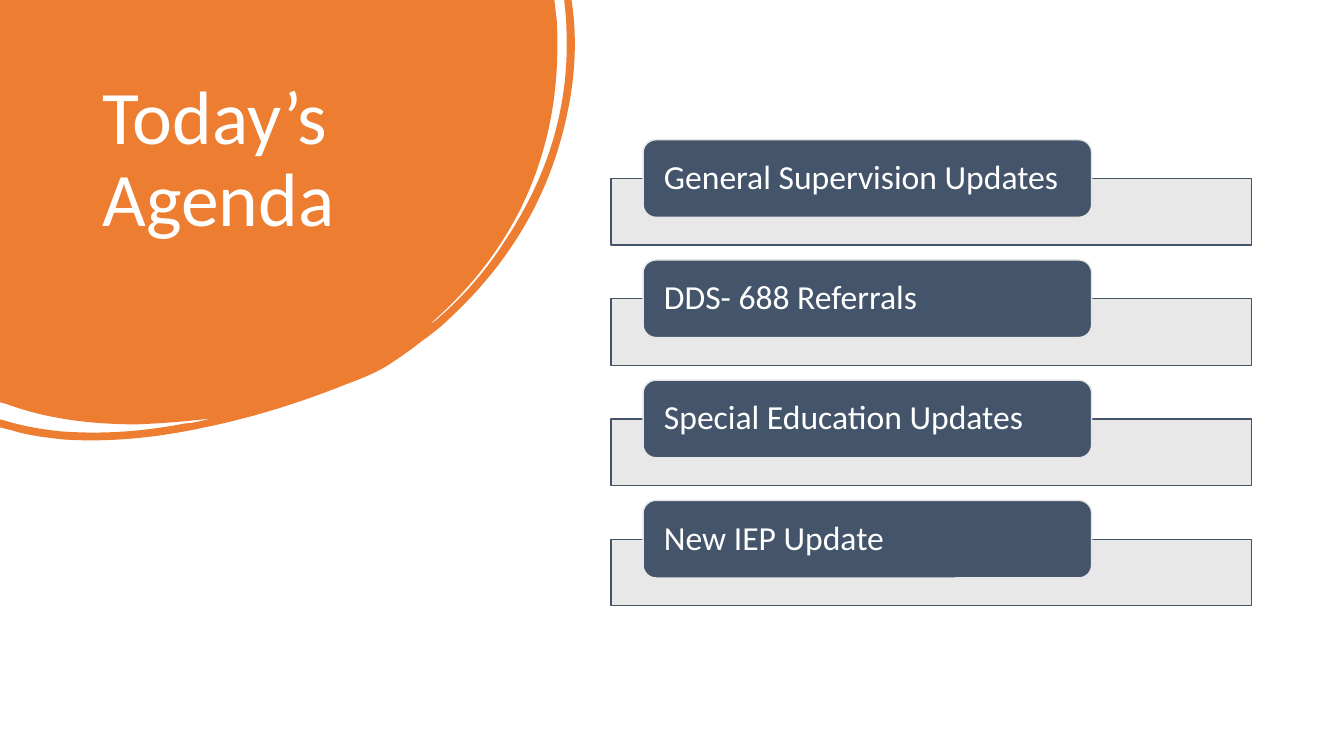
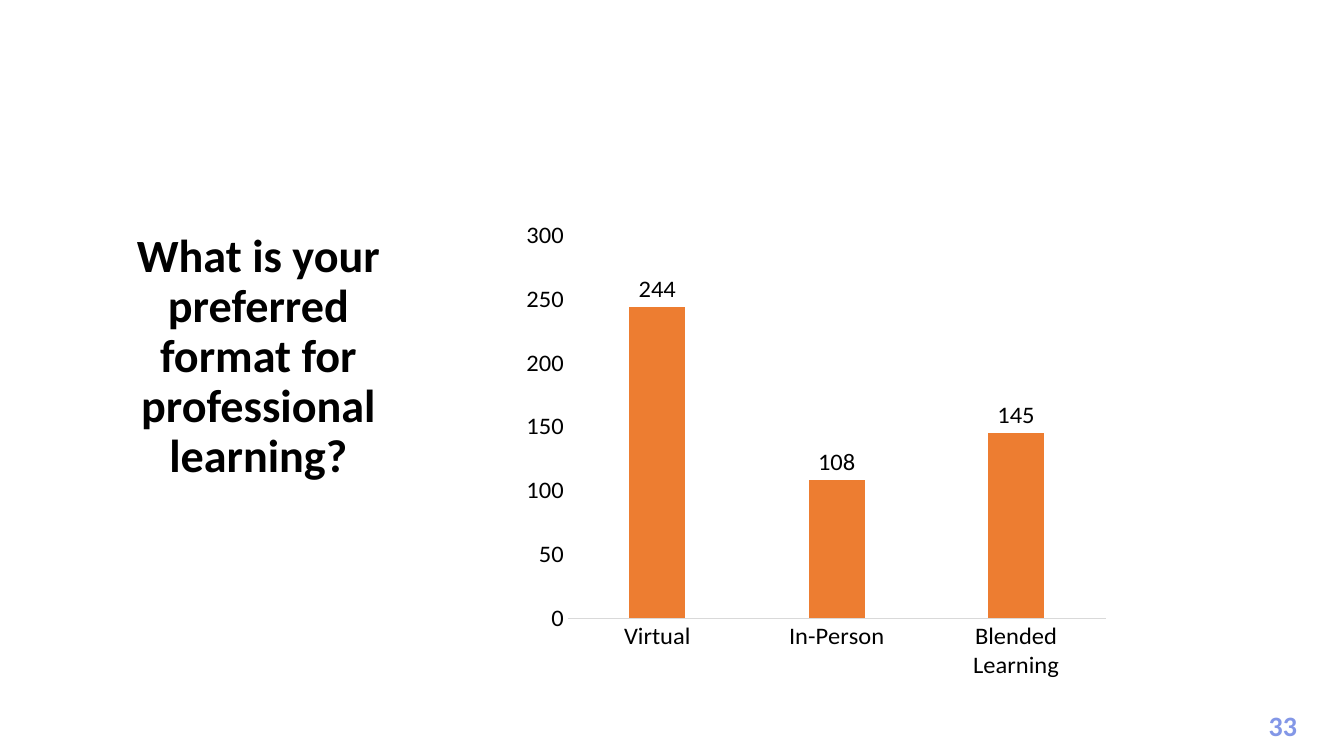
from dataclasses import dataclass
from typing import NamedTuple

from lxml import etree
from pptx import Presentation
from pptx.chart.data import CategoryChartData
from pptx.dml.color import RGBColor
from pptx.enum.chart import XL_CHART_TYPE, XL_LABEL_POSITION, XL_TICK_MARK
from pptx.enum.shapes import MSO_SHAPE
from pptx.enum.text import MSO_ANCHOR, PP_ALIGN
from pptx.oxml import parse_xml
from pptx.oxml.ns import nsdecls, qn
from pptx.util import Inches, Pt

COLUMN_CHART = XL_CHART_TYPE.COLUMN_CLUSTERED
LABEL_ABOVE = XL_LABEL_POSITION.OUTSIDE_END
NO_TICKS = XL_TICK_MARK.NONE
RECTANGLE, ROUNDED = MSO_SHAPE.RECTANGLE, MSO_SHAPE.ROUNDED_RECTANGLE
TOP, MIDDLE = MSO_ANCHOR.TOP, MSO_ANCHOR.MIDDLE
LEFT, CENTER = PP_ALIGN.LEFT, PP_ALIGN.CENTER

# Shared look
FONT = "Calibri"
ORANGE, NAVY, PALE = "ED7D31", "44546A", "E7E6E6"
WHITE, BLACK, AXIS_GREY, NUMBER_BLUE = "FFFFFF", "000000", "D9D9D9", "8397E7"
SLIDE_WIDTH, SLIDE_HEIGHT = Inches(13.333), Inches(7.5)


class Box(NamedTuple):
    """Left, top, width and height as percentages of the slide."""
    left: float
    top: float
    width: float
    height: float

    def emu(self) -> tuple[int, int, int, int]:
        return (round(self.left * SLIDE_WIDTH / 100), round(self.top * SLIDE_HEIGHT / 100),
                round(self.width * SLIDE_WIDTH / 100), round(self.height * SLIDE_HEIGHT / 100))


@dataclass(frozen=True)
class TextStyle:
    size: float
    color: str
    bold: bool = False
    align: PP_ALIGN = LEFT
    anchor: MSO_ANCHOR = TOP
    line_spacing: float = 0.9


AGENDA_TITLE = TextStyle(54, WHITE)
AGENDA_ITEM = TextStyle(24, WHITE, anchor=MIDDLE)
QUESTION_TITLE = TextStyle(33, BLACK, bold=True, align=CENTER, anchor=MIDDLE)
PAGE_NUMBER = TextStyle(20, NUMBER_BLUE, bold=True, align=CENTER, line_spacing=1.0)

# Agenda rows: a pale bar with a rounded label over its upper edge
AGENDA = ("General Supervision Updates", "DDS- 688 Referrals",
          "Special Education Updates", "New IEP Update")
BAR = Box(45.45, 23.63, 47.68, 8.8)
LABEL = Box(47.85, 18.49, 33.38, 10.27)
ROW_PITCH = 15.9

# Blob outline in inches: one point is a line, three points are a curve
BLOB = (
    ((5.5, 0),), ((5.52, 0.17),),
    ((5.53, 0.26), (5.53, 0.36), (5.53, 0.45)),
    ((5.53, 1.01), (5.42, 1.54), (5.18, 2.04)),
    ((4.96, 2.49), (4.65, 2.88), (4.27, 3.21)),
    ((4.29, 3.21), (4.3, 3.19), (4.32, 3.18)),
    ((4.59, 2.95), (4.82, 2.69), (5.01, 2.39)),
    ((5.43, 1.76), (5.65, 1.07), (5.62, 0.3)),
    ((5.62, 0.21), (5.61, 0.12), (5.6, 0.03)),
    ((5.6, 0),), ((5.67, 0),), ((5.68, 0.07),),
    ((5.74, 0.54), (5.68, 1.02), (5.53, 1.5)),
    ((5.33, 2.14), (4.97, 2.68), (4.48, 3.14)),
    ((4.39, 3.23), (4.29, 3.31), (4.19, 3.38)),
    ((4.09, 3.46), (3.99, 3.53), (3.87, 3.61)),
    ((3.75, 3.69), (3.6, 3.75), (3.44, 3.81)),
    ((2.99, 3.99), (2.52, 4.14), (2.03, 4.24)),
    ((1.57, 4.34), (1.1, 4.39), (0.63, 4.36)),
    ((0.45, 4.34), (0.28, 4.32), (0.12, 4.27)),
    ((0, 4.24),), ((0, 4.16),), ((0.04, 4.17),),
    ((0.23, 4.23), (0.42, 4.26), (0.61, 4.28)),
    ((1.03, 4.31), (1.43, 4.28), (1.84, 4.2)),
    ((1.89, 4.2), (1.93, 4.19), (1.98, 4.18)),
    ((2.02, 4.17), (2.06, 4.16), (2.1, 4.15)),
    ((1.86, 4.18), (1.61, 4.2), (1.36, 4.21)),
    ((0.92, 4.21), (0.48, 4.16), (0.07, 4.01)),
    ((0, 3.99),),
)


def rgb(color: str) -> RGBColor:
    return RGBColor.from_string(color)


def style_font(font, size: float, color: str, bold: bool = False) -> None:
    font.name, font.size, font.bold = FONT, Pt(size), bold
    font.color.rgb = rgb(color)


def write_text(shape, text: str, style: TextStyle) -> None:
    frame = shape.text_frame
    frame.word_wrap = True
    frame.vertical_anchor = style.anchor
    paragraph = frame.paragraphs[0]
    paragraph.alignment = style.align
    paragraph.line_spacing = style.line_spacing
    for index, line in enumerate(text.split("\n")):
        if index:
            paragraph.add_line_break()
        run = paragraph.add_run()
        run.text = line
        style_font(run.font, style.size, style.color, style.bold)


def add_text(slide, box: Box, text: str, style: TextStyle) -> None:
    write_text(slide.shapes.add_textbox(*box.emu()), text, style)


def add_block(slide, kind: MSO_SHAPE, box: Box, fill: str, line: str):
    shape = slide.shapes.add_shape(kind, *box.emu())
    shape.shadow.inherit = False
    shape.fill.solid()
    shape.fill.fore_color.rgb = rgb(fill)
    shape.line.color.rgb = rgb(line)
    shape.line.width = Pt(1)
    return shape


def set_opacity(shape, percent: int) -> None:
    color = shape.fill._xPr.find(qn("a:solidFill"))[0]
    etree.SubElement(color, qn("a:alpha")).set("val", str(percent * 1000))


def add_blob(slide) -> None:
    builder = slide.shapes.build_freeform(0, 0)
    builder.add_line_segments([(Inches(x), Inches(y)) for segment in BLOB for x, y in segment],
                              close=True)
    blob = builder.convert_to_shape()
    blob.shadow.inherit = False
    blob.fill.solid()
    blob.fill.fore_color.rgb = rgb(ORANGE)
    blob.line.fill.background()

    # Turn each run of three points into one Bézier curve
    lines = iter(list(blob._element.iter(qn("a:lnTo"))))
    for segment in BLOB:
        first, *others = [next(lines) for _ in segment]
        if others:
            first.tag = qn("a:cubicBezTo")
        for line in others:
            first.append(line[0])
            line.getparent().remove(line)


def add_agenda_row(slide, row: int, text: str) -> None:
    bar, label = (box._replace(top=box.top + row * ROW_PITCH) for box in (BAR, LABEL))
    set_opacity(add_block(slide, RECTANGLE, bar, PALE, NAVY), 90)
    shape = add_block(slide, ROUNDED, label, NAVY, PALE)
    frame = shape.text_frame
    # The rounded corner itself adds a little to this inset
    frame.margin_left = frame.margin_right = Inches(0.17)
    frame.margin_top = frame.margin_bottom = 0
    write_text(shape, text, AGENDA_ITEM)


def set_plot_layout(chart, **shares: float) -> None:
    plot_area = chart._chartSpace.chart.plotArea
    for layout in plot_area.findall(qn("c:layout")):
        plot_area.remove(layout)
    values = "".join(f'<c:{name} val="{share}"/>' for name, share in shares.items())
    plot_area.insert(0, parse_xml(
        f'<c:layout {nsdecls("c")}><c:manualLayout><c:layoutTarget val="inner"/>'
        f'<c:xMode val="edge"/><c:yMode val="edge"/>{values}</c:manualLayout></c:layout>'))


def add_format_chart(slide, box: Box) -> None:
    data = CategoryChartData()
    data.categories = ("Virtual", "In-Person", "Blended Learning")
    data.add_series("Series 1", (244, 108, 145))
    chart = slide.shapes.add_chart(COLUMN_CHART, *box.emu(), data).chart
    chart.has_title = chart.has_legend = False
    style_font(chart.font, 18, BLACK)
    set_plot_layout(chart, x=0.043, y=0.177, w=0.932, h=0.767)

    for axis in (chart.category_axis, chart.value_axis):
        axis.has_major_gridlines = False
        axis.major_tick_mark = axis.minor_tick_mark = NO_TICKS
        style_font(axis.tick_labels.font, 18, BLACK)
    category_line = chart.category_axis.format.line
    category_line.color.rgb = rgb(AXIS_GREY)
    category_line.width = Pt(0.75)
    value_axis = chart.value_axis
    value_axis.format.line.fill.background()
    value_axis.minimum_scale, value_axis.maximum_scale, value_axis.major_unit = 0, 300, 50

    plot = chart.plots[0]
    plot.gap_width, plot.overlap, plot.vary_by_categories = 219, -27, False
    series_fill = plot.series[0].format.fill
    series_fill.solid()
    series_fill.fore_color.rgb = rgb(ORANGE)
    plot.has_data_labels = True
    labels = plot.data_labels
    labels.show_value, labels.position = True, LABEL_ABOVE
    style_font(labels.font, 18, BLACK)


def build_agenda(slide) -> None:
    add_blob(slide)
    add_text(slide, Box(6.9, 9.87, 26.4, 29.6), "Today’s\nAgenda", AGENDA_TITLE)
    for row, text in enumerate(AGENDA):
        add_agenda_row(slide, row, text)


def build_question(slide) -> None:
    add_text(slide, Box(93.13, 93.07, 4.65, 5.87), "33", PAGE_NUMBER)
    add_text(slide, Box(8.43, 28.67, 21.6, 37.2),
             "What is your preferred format for professional learning?", QUESTION_TITLE)
    add_format_chart(slide, Box(39.17, 19.42, 44.18, 70.4))


def main() -> None:
    presentation = Presentation()
    presentation.slide_width, presentation.slide_height = SLIDE_WIDTH, SLIDE_HEIGHT
    blank = presentation.slide_layouts[6]
    for build in (build_agenda, build_question):
        build(presentation.slides.add_slide(blank))
    presentation.save("out.pptx")


if __name__ == "__main__":
    main()
